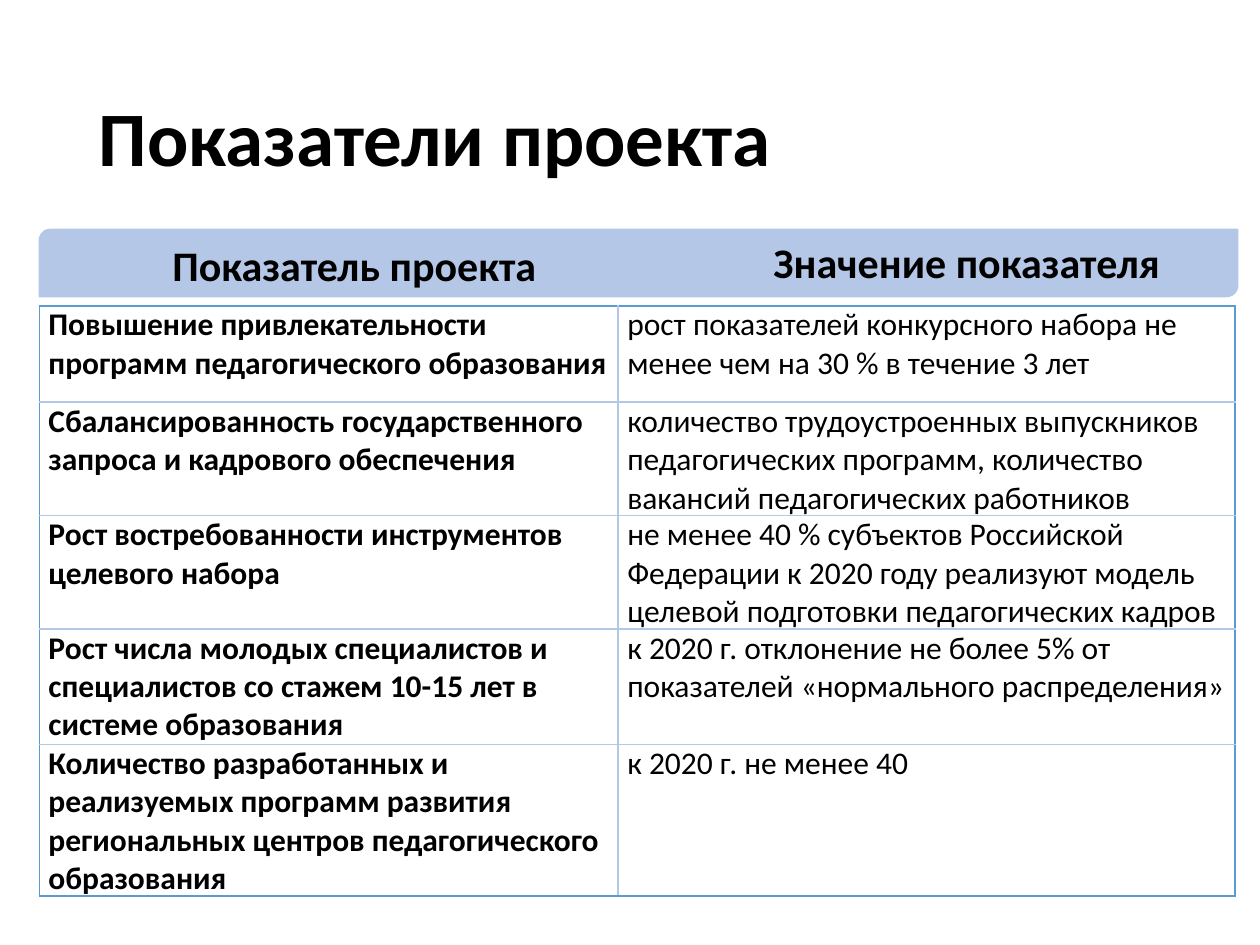
import pptx
import pptx.dml.color
import pptx.enum.shapes
import pptx.enum.text
import pptx.oxml.ns
import pptx.util
from lxml import etree

Pt = pptx.util.Pt
PALE, BLUE, BLACK = "B4C7E7", "5B9BD5", "000000"
HEADINGS = ["Показатель проекта", "Значение показателя"]
INDICATORS = [
    ("Повышение привлекательности программ педагогического образования",
     "рост показателей конкурсного набора не менее чем на 30 % в течение 3 лет"),
    ("Сбалансированность государственного запроса и кадрового обеспечения",
     "количество трудоустроенных выпускников педагогических программ, "
     "количество вакансий педагогических работников"),
    ("Рост востребованности инструментов целевого набора",
     "не менее 40 % субъектов Российской Федерации к 2020 году реализуют "
     "модель целевой подготовки педагогических кадров"),
    ("Рост числа молодых специалистов и специалистов со стажем 10-15 лет "
     "в системе образования",
     "к 2020 г. отклонение не более 5% от показателей «нормального распределения»"),
    ("Количество разработанных и реализуемых программ развития региональных "
     "центров педагогического образования",
     "к 2020 г. не менее 40"),
]
COLUMN_WIDTHS = [330.8, 352.4]
ROW_HEIGHTS = [55, 56, 56, 66, 84]


def color(value):
    return pptx.dml.color.RGBColor.from_string(value)


def style(para, size, bold):
    para.font.name = "Calibri"
    para.font.size = Pt(size)
    para.font.bold = bold
    para.font.color.rgb = color(BLACK)


def add_text(page, box, text, size, align, anchor):
    frame = page.shapes.add_textbox(*map(Pt, box)).text_frame
    frame.word_wrap = True
    frame.vertical_anchor = anchor
    para = frame.paragraphs[0]
    para.text = text
    para.alignment = align
    style(para, size, True)
    return para


def add_title(page, box):
    para = add_text(page, box, "Показатели проекта", 44,
                    pptx.enum.text.PP_ALIGN.LEFT, pptx.enum.text.MSO_ANCHOR.MIDDLE)
    para.line_spacing = 0.9


def add_header(page, box):
    left, top, width, height = box
    band = page.shapes.add_shape(
        pptx.enum.shapes.MSO_SHAPE.ROUND_2_DIAG_RECTANGLE, *map(Pt, box))
    band.shadow.inherit = False
    band.fill.solid()
    band.fill.fore_color.rgb = color(PALE)
    band.line.color.rgb = color(PALE)
    band.line.width = Pt(1)

    rule = page.shapes.add_connector(
        pptx.enum.shapes.MSO_CONNECTOR.STRAIGHT,
        Pt(left + 148.3), Pt(top), Pt(left + 673.2), Pt(top))
    rule.line.color.rgb = color(PALE)
    rule.line.width = Pt(0.5)
    etree.SubElement(rule._element.spPr, pptx.oxml.ns.qn("a:effectLst"))

    places = [(3.6, 2.2, 352.8), (380.9, 0.7, 298.1)]
    for text, (shift, drop, span) in zip(HEADINGS, places):
        add_text(page, (left + shift, top + drop, span, 36), text, 24,
                 pptx.enum.text.PP_ALIGN.CENTER, pptx.enum.text.MSO_ANCHOR.TOP)


def set_borders(cell, edges):
    properties = cell._tc.get_or_add_tcPr()
    for index, (side, value) in enumerate(edges.items()):
        line = etree.Element(pptx.oxml.ns.qn(f"a:ln{side}"), w=str(Pt(1)))
        fill = etree.SubElement(line, pptx.oxml.ns.qn("a:solidFill"))
        etree.SubElement(fill, pptx.oxml.ns.qn("a:srgbClr"), val=value)
        properties.insert(index, line)


def add_indicators(page, box):
    table = page.shapes.add_table(
        len(INDICATORS), len(COLUMN_WIDTHS), *map(Pt, box)).table
    table.first_row = table.horz_banding = False
    for column, width in zip(table.columns, COLUMN_WIDTHS):
        column.width = Pt(width)
    last = len(INDICATORS) - 1
    for number, texts in enumerate(INDICATORS):
        table.rows[number].height = Pt(ROW_HEIGHTS[number])
        for position, text in enumerate(texts):
            cell = table.cell(number, position)
            cell.margin_left = cell.margin_right = Pt(5.2)
            cell.margin_top = cell.margin_bottom = 0
            cell.fill.background()
            para = cell.text_frame.paragraphs[0]
            para.text = text
            style(para, 18, position == 0)
            set_borders(cell, {
                "L": BLUE if position == 0 else PALE,
                "R": BLUE if position == 1 else PALE,
                "T": BLUE if number == 0 else PALE,
                "B": BLUE if number == last else PALE,
            })


def main():
    deck = pptx.Presentation()
    deck.slide_width, deck.slide_height = Pt(720), Pt(540)
    page = deck.slides.add_slide(deck.slide_layouts[6])
    add_title(page, (49.5, 28.75, 621, 104.4))
    add_indicators(page, (22.5, 174.8, sum(COLUMN_WIDTHS), sum(ROW_HEIGHTS)))
    add_header(page, (22.5, 131.2, 684.7, 38.2))
    deck.save("out.pptx")


if __name__ == "__main__":
    main()
